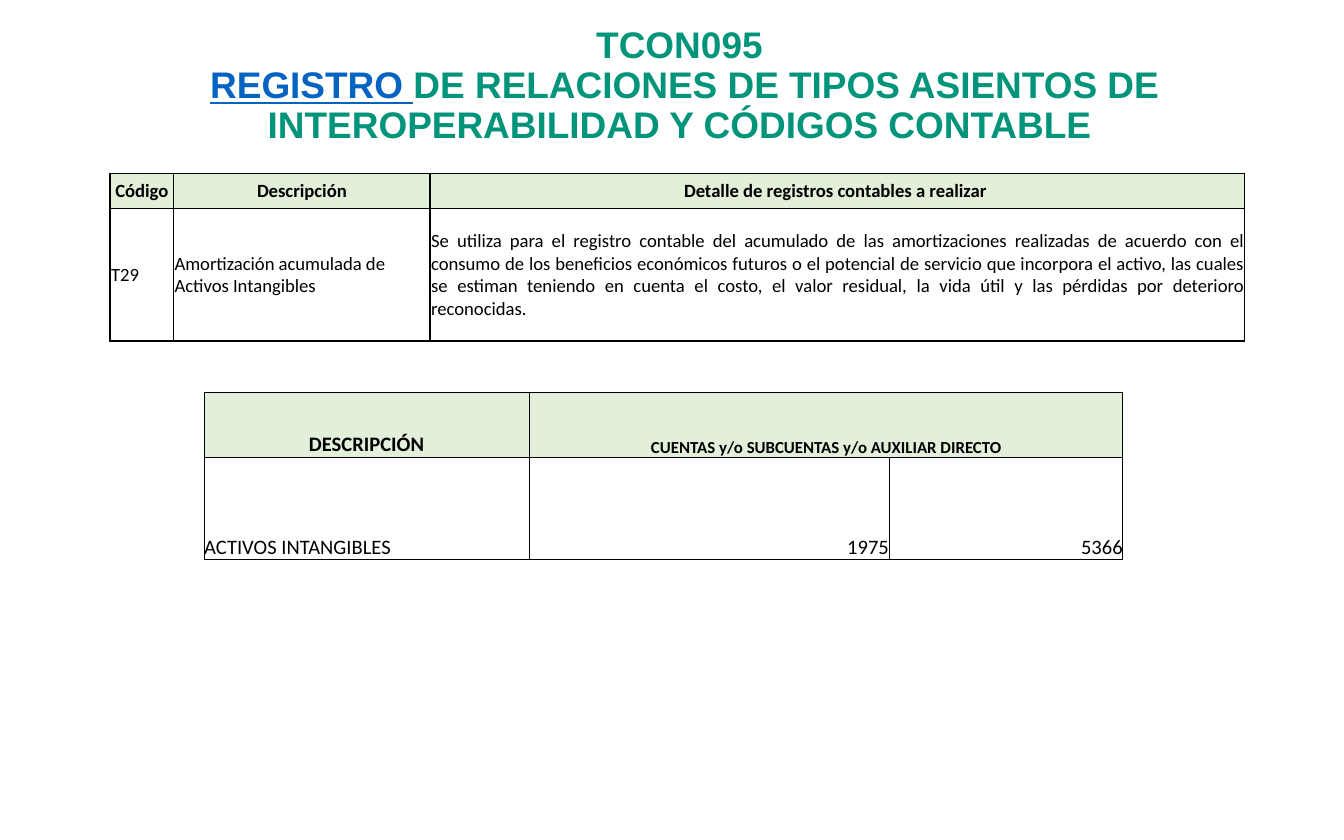
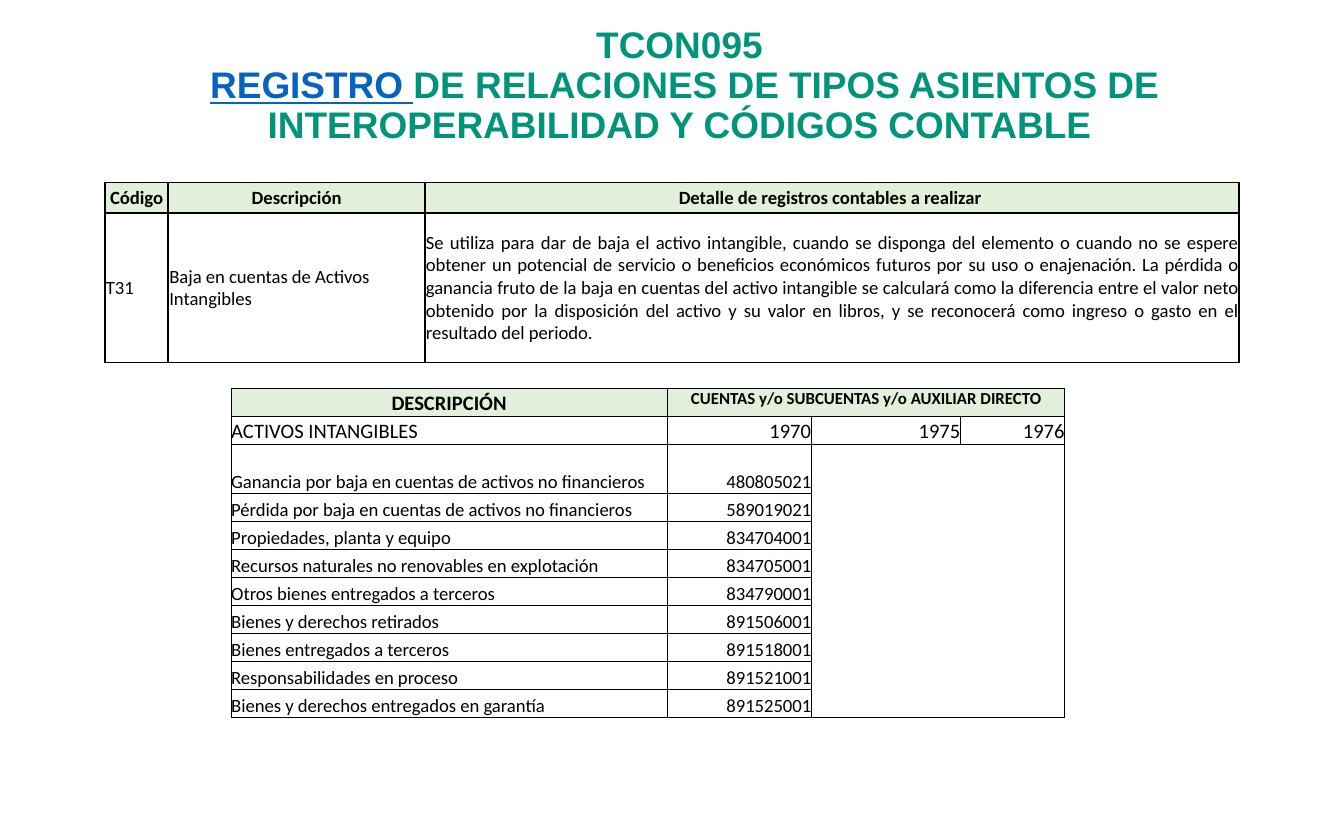
from dataclasses import dataclass

import pptx
import pptx.dml.color
import pptx.enum.text
import pptx.oxml
import pptx.oxml.ns
import pptx.util
from pptx.util import Cm, Pt

ALIGN = pptx.enum.text.PP_ALIGN
ANCHOR = pptx.enum.text.MSO_ANCHOR


@dataclass(frozen=True)
class Theme:
    title_font: str = "Arial"
    table_font: str = "Calibri"
    title: str = "00947A"
    link: str = "0563C1"
    ink: str = "000000"
    detail_head: str = "E2EFD9"
    accounts_head: str = "E2EFDA"
    title_size: float = 19.8
    account_size: float = 11
    body_size: float = 10
    small_size: float = 9


THEME = Theme()


# Text
def add_span(para, text, font, size, color, bold=False, underline=False):
    span = para.add_run()
    span.text = text
    span.font.name = font
    span.font.size = Pt(size)
    span.font.bold = bold
    span.font.underline = underline
    span.font.color.rgb = pptx.dml.color.RGBColor.from_string(color)


def add_page(deck):
    """Add a page with the shared title."""
    page = deck.slides.add_slide(deck.slide_layouts[5])
    box = page.shapes.title
    box.left, box.top, box.width, box.height = Cm(0.28), Cm(0.66), Cm(25.12), Cm(2.72)
    frame = box.text_frame
    frame.word_wrap = True
    frame.auto_size = pptx.enum.text.MSO_AUTO_SIZE.NONE
    frame.vertical_anchor = ANCHOR.MIDDLE
    frame.margin_top, frame.margin_bottom = 0, Cm(0.76)
    para = frame.paragraphs[0]
    para.alignment = ALIGN.CENTER
    para.line_spacing = 0.9

    def title_span(text, color=THEME.title, underline=False):
        add_span(para, text, THEME.title_font, THEME.title_size, color, True, underline)

    title_span("TCON095")
    para.add_line_break()
    title_span(" ")
    title_span("REGISTRO ", THEME.link, True)
    title_span("DE RELACIONES DE TIPOS ASIENTOS DE INTEROPERABILIDAD Y CÓDIGOS CONTABLE")
    return page


# Tables
def set_borders(cell, points):
    properties = cell._tc.get_or_add_tcPr()
    for side in ("lnL", "lnR", "lnT", "lnB"):
        properties.append(pptx.oxml.parse_xml(
            f'<a:{side} {pptx.oxml.ns.nsdecls("a")} w="{Pt(points)}"><a:solidFill>'
            f'<a:srgbClr val="{THEME.ink}"/></a:solidFill></a:{side}>'))


def add_grid(page, left, top, columns, rows, border, margin=0):
    """Add an unfilled, bordered table; column and row sizes are in cm."""
    table = page.shapes.add_table(len(rows), len(columns), Cm(left), Cm(top),
                                  Cm(sum(columns)), Cm(sum(rows))).table
    table.first_row = table.horz_banding = False
    for column, width in zip(table.columns, columns):
        column.width = Cm(width)
    for row, height in zip(table.rows, rows):
        row.height = Cm(height)
    for cell in table.iter_cells():
        cell.margin_left = cell.margin_right = cell.margin_top = Cm(margin)
        cell.margin_bottom = 0
        set_borders(cell, border)
        cell.fill.background()
        end = pptx.oxml.parse_xml(f'<a:endParaRPr {pptx.oxml.ns.nsdecls("a")} '
                                  f'sz="{THEME.body_size * 100}"/>')
        cell.text_frame.paragraphs[0]._p.append(end)
    return table


def fill_cell(cell, text, size, align=ALIGN.LEFT, anchor=ANCHOR.BOTTOM, head=None):
    cell.vertical_anchor = anchor
    para = cell.text_frame.paragraphs[0]
    para.alignment = align
    add_span(para, text, THEME.table_font, size, THEME.ink, bold=head is not None)
    if head:
        cell.fill.solid()
        cell.fill.fore_color.rgb = pptx.dml.color.RGBColor.from_string(head)


def add_detail_table(page, left, top, rows, record):
    table = add_grid(page, left, top, (1.2, 4.85, 15.39), rows, 1, 0.02)
    heads = ("Código", "Descripción", "Detalle de registros contables a realizar ")
    aligns = (ALIGN.LEFT, ALIGN.LEFT, ALIGN.JUSTIFY)
    for index, (head, text, align) in enumerate(zip(heads, record, aligns)):
        fill_cell(table.cell(0, index), head, THEME.body_size, ALIGN.CENTER,
                  ANCHOR.MIDDLE, THEME.detail_head)
        fill_cell(table.cell(1, index), text, THEME.body_size, align, ANCHOR.MIDDLE)


def add_accounts_table(page, left, top, columns, rows, records, head_anchor):
    table = add_grid(page, left, top, columns, rows, 0.5)
    table.cell(0, 1).merge(table.cell(0, len(columns) - 1))
    fill_cell(table.cell(0, 0), "DESCRIPCIÓN", THEME.account_size, ALIGN.CENTER,
              head=THEME.accounts_head)
    fill_cell(table.cell(0, 1), "CUENTAS y/o SUBCUENTAS y/o AUXILIAR DIRECTO",
              THEME.small_size, ALIGN.CENTER, head_anchor, THEME.accounts_head)
    for row, (name, *accounts) in enumerate(records, 1):
        size = THEME.account_size if row == 1 else THEME.body_size
        fill_cell(table.cell(row, 0), name, size)
        for column, account in enumerate(accounts, 1):
            fill_cell(table.cell(row, column), account, size, ALIGN.RIGHT)
    # One open area beside the single-account rows
    if len(records) > 1:
        table.cell(2, 2).merge(table.cell(len(records), len(columns) - 1))


# Content
AMORTIZATION = (
    "T29", "Amortización acumulada de Activos Intangibles",
    "Se utiliza para el registro contable del acumulado de las amortizaciones realizadas "
    "de acuerdo con el consumo de los beneficios económicos futuros o el potencial de "
    "servicio que incorpora el activo, las cuales se estiman teniendo en cuenta el costo, "
    "el valor residual, la vida útil y las pérdidas por deterioro reconocidas.")
WRITE_OFF = (
    "T31", "Baja en cuentas de Activos Intangibles",
    "Se utiliza para dar de baja el activo intangible, cuando se disponga del elemento o "
    "cuando no se espere obtener un potencial de servicio o beneficios económicos futuros "
    "por su uso o enajenación. La pérdida o ganancia fruto de la baja en cuentas del activo "
    "intangible se calculará como la diferencia entre el valor neto obtenido por la "
    "disposición del activo y su valor en libros, y se reconocerá como ingreso o gasto en "
    "el resultado del periodo.")
AMORTIZATION_ACCOUNTS = [("ACTIVOS INTANGIBLES", "1975", "5366")]
WRITE_OFF_ACCOUNTS = [
    ("ACTIVOS INTANGIBLES", "1970", "1975", "1976"),
    ("Ganancia por baja en cuentas de activos no financieros", "480805021"),
    ("Pérdida por baja en cuentas de activos no financieros", "589019021"),
    ("Propiedades, planta y equipo", "834704001"),
    ("Recursos naturales no renovables en explotación", "834705001"),
    ("Otros bienes entregados a terceros", "834790001"),
    ("Bienes y derechos retirados", "891506001"),
    ("Bienes entregados a terceros", "891518001"),
    ("Responsabilidades en proceso", "891521001"),
    ("Bienes y derechos entregados en garantía", "891525001"),
]


def main():
    deck = pptx.Presentation()
    deck.slide_width, deck.slide_height = Cm(25.4), Cm(15.88)

    # Amortization
    page = add_page(deck)
    add_detail_table(page, 2.08, 3.28, (0.66, 2.51), AMORTIZATION)
    add_accounts_table(page, 3.86, 7.41, (6.14, 6.8, 4.42), (1.24, 1.93),
                       AMORTIZATION_ACCOUNTS, ANCHOR.BOTTOM)

    # Write-off
    page = add_page(deck)
    add_detail_table(page, 1.98, 3.45, (0.58, 2.82), WRITE_OFF)
    add_accounts_table(page, 4.37, 7.34, (8.24, 2.72, 2.82, 1.97),
                       [0.53] * 2 + [0.92] + [0.53] * 8, WRITE_OFF_ACCOUNTS, ANCHOR.TOP)

    deck.save("out.pptx")


if __name__ == "__main__":
    main()
